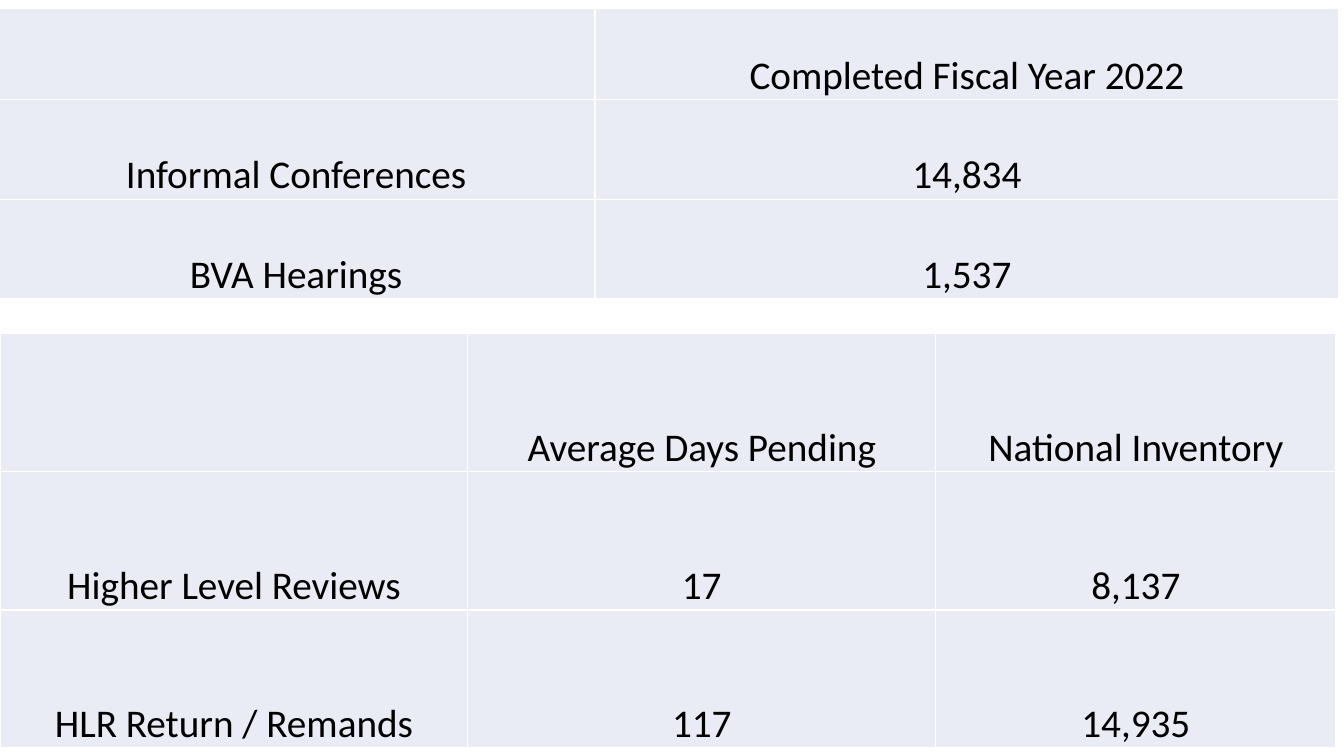
from lxml import etree
from pptx import Presentation
from pptx.dml.color import RGBColor
from pptx.enum.text import MSO_ANCHOR, PP_ALIGN
from pptx.oxml.ns import qn
from pptx.util import Pt

CENTER = PP_ALIGN.CENTER
BOTTOM = MSO_ANCHOR.BOTTOM
BLANK_LAYOUT = 6


def color(hex_string):
    return RGBColor.from_string(hex_string)


def write(text_frame, text, font="Calibri", size=28, ink="000000", align=CENTER):
    paragraph = text_frame.paragraphs[0]
    paragraph.alignment = align
    paragraph.font.size = Pt(size)
    if text:
        run = paragraph.add_run()
        run.text = text
        run.font.name = font
        run.font.size = Pt(size)
        run.font.color.rgb = color(ink)


class SlideBuilder:
    cell_fill = "E9EBF5"
    border_color = "FFFFFF"
    border_width = 1
    inset = 0.7

    def __init__(self, slide):
        self.slide = slide

    def add_borders(self, cell):
        properties = cell._tc.get_or_add_tcPr()
        for side in ("a:lnL", "a:lnR", "a:lnT", "a:lnB"):
            line = etree.SubElement(properties, qn(side), w=str(Pt(self.border_width)))
            fill = etree.SubElement(line, qn("a:solidFill"))
            etree.SubElement(fill, qn("a:srgbClr"), val=self.border_color)

    def format_cell(self, cell, text):
        self.add_borders(cell)
        cell.fill.solid()
        cell.fill.fore_color.rgb = color(self.cell_fill)
        cell.vertical_anchor = BOTTOM
        cell.margin_left = cell.margin_right = cell.margin_top = Pt(self.inset)
        cell.margin_bottom = Pt(0)
        write(cell.text_frame, text)

    def add_table(self, left, top, widths, heights, rows):
        table = self.slide.shapes.add_table(
            len(heights), len(widths), Pt(left), Pt(top),
            Pt(sum(widths)), Pt(sum(heights))).table
        table.first_row = table.horz_banding = False
        for column, width in zip(table.columns, widths):
            column.width = Pt(width)
        for row, height, texts in zip(table.rows, heights, rows):
            row.height = Pt(height)
            for cell, text in zip(row.cells, texts):
                self.format_cell(cell, text)


def main():
    presentation = Presentation()
    presentation.slide_width = Pt(960)
    presentation.slide_height = Pt(540)
    layout = presentation.slide_layouts[BLANK_LAYOUT]
    builder = SlideBuilder(presentation.slides.add_slide(layout))

    builder.add_table(0, 238.3, [334.2, 334.2, 286], [98.7] * 3, [
        ["", "Average Days Pending", "National Inventory"],
        ["Higher Level Reviews", "17", "8,137"],
        ["HLR Return / Remands", "117", "14,935"],
    ])
    builder.add_table(-2, 6, [427, 531.4], [65.2, 71.2, 71.2], [
        ["", "Completed Fiscal Year 2022"],
        ["Informal Conferences", "14,834"],
        ["BVA Hearings", "1,537"],
    ])
    presentation.save("out.pptx")


if __name__ == "__main__":
    main()
